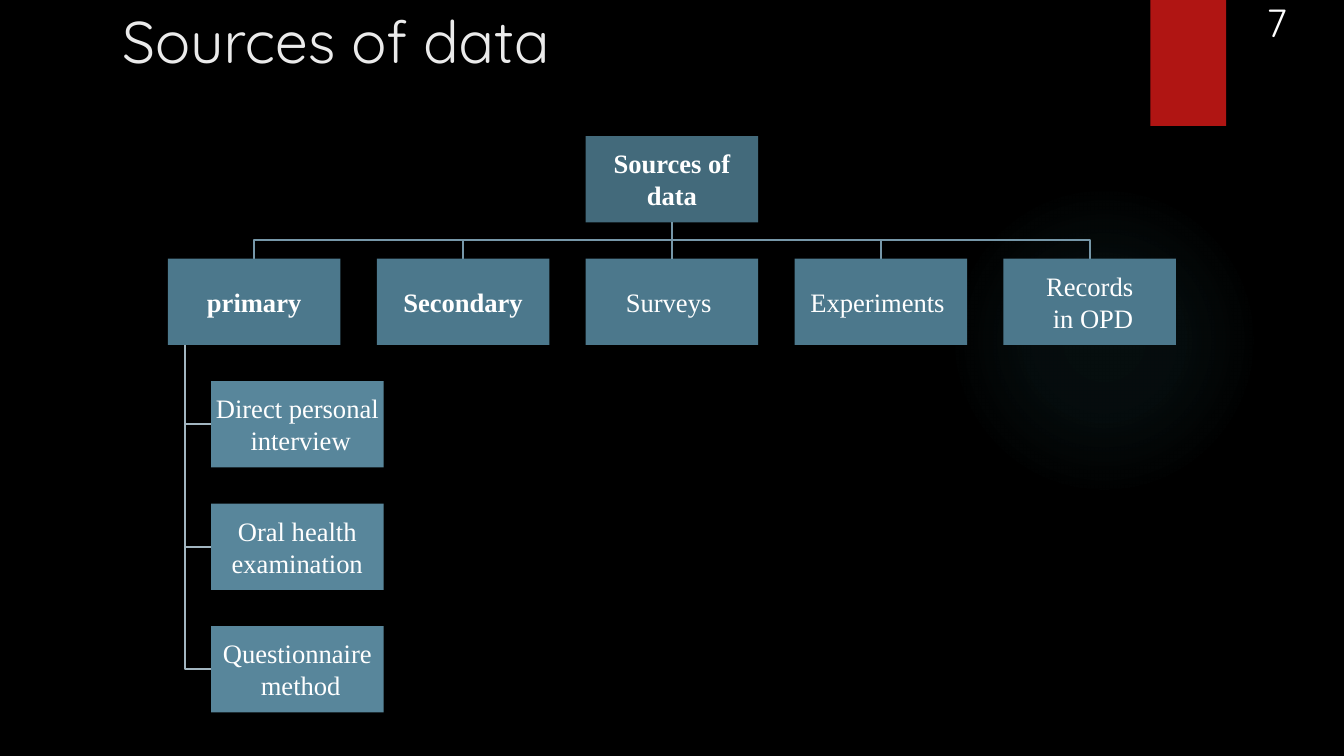
from lxml import etree
from pptx import Presentation
from pptx.dml.color import RGBColor
from pptx.enum.shapes import MSO_CONNECTOR, MSO_SHAPE
from pptx.enum.text import MSO_ANCHOR, PP_ALIGN
from pptx.oxml import parse_xml
from pptx.oxml.ns import qn
from pptx.util import Pt

RECTANGLE = MSO_SHAPE.RECTANGLE
OVAL = MSO_SHAPE.OVAL
STRAIGHT = MSO_CONNECTOR.STRAIGHT
CENTER = PP_ALIGN.CENTER
LEFT = PP_ALIGN.LEFT
TOP = MSO_ANCHOR.TOP
MIDDLE = MSO_ANCHOR.MIDDLE
BOTTOM = MSO_ANCHOR.BOTTOM
DRAWING = "http://schemas.openxmlformats.org/drawingml/2006/main"

COLORS = {
    "background": "000000", "glow": "50B9C1", "ribbon": "B01513",
    "title": "EBEBEB", "text": "FFFFFF",
    "root": "436A7B", "source": "4C788C", "method": "58869B",
    "source line": "7697A8", "method line": "A2B5C0",
}
BOX_WIDTH, BOX_HEIGHT = 123.2, 61.6
CHART_LEFT, CHART_TOP = 120, 97.2
COLUMN_STEP, ROW_STEP = 149.2, 87.5
METHOD_LEFT, TRUNK_X = 150.8, 132.4


def write_lines(frame, lines, font_name, size, color, align, bold=False):
    frame.word_wrap = True
    for index, line in enumerate(lines):
        para = frame.paragraphs[0] if index == 0 else frame.add_paragraph()
        para.alignment = align
        span = para.add_run()
        span.text = line
        span.font.name = font_name
        span.font.size = Pt(size)
        span.font.bold = bold
        span.font.color.rgb = RGBColor.from_string(COLORS[color])


def add_block(page, shape_type, left, top, width, height, color):
    block = page.shapes.add_shape(shape_type, Pt(left), Pt(top), Pt(width), Pt(height))
    block.shadow.inherit = False
    block.fill.solid()
    block.fill.fore_color.rgb = RGBColor.from_string(COLORS[color])
    block.line.fill.background()
    return block


deck = Presentation()
deck.slide_width, deck.slide_height = Pt(960), Pt(540)
page = deck.slides.add_slide(deck.slide_layouts[5])
page.background.fill.solid()
page.background.fill.fore_color.rgb = RGBColor.from_string(COLORS["background"])

glow = add_block(page, OVAL, 677.5, 131.8, 221.8, 221.8, "glow")
stops = "".join(
    f'<a:gs pos="{place}000"><a:srgbClr val="{COLORS["glow"]}"><a:alpha val="{alpha}000"/></a:srgbClr></a:gs>'
    for place, alpha in [(0, 7), (36, 6), (69, 0)]
)
gradient = parse_xml(
    f'<a:gradFill xmlns:a="{DRAWING}"><a:gsLst>{stops}</a:gsLst><a:path path="circle">'
    '<a:fillToRect l="50000" t="50000" r="50000" b="50000"/></a:path></a:gradFill>'
)
glow_properties = glow.element.spPr
glow_properties.replace(glow_properties.find(qn("a:solidFill")), gradient)

ribbon = add_block(page, RECTANGLE, 821.8, 0, 54, 90, "ribbon")
ribbon_effects = ribbon.element.spPr.find(qn("a:effectLst"))
ribbon_effects.append(parse_xml(
    f'<a:outerShdw xmlns:a="{DRAWING}" blurRad="{Pt(3)}" dist="{Pt(2)}" dir="5400000" rotWithShape="0">'
    '<a:srgbClr val="000000"><a:alpha val="45000"/></a:srgbClr></a:outerShdw>'
))

title = page.shapes.title
title.left, title.top, title.width, title.height = Pt(80), Pt(0), Pt(880), Pt(66)
title.text_frame.vertical_anchor = TOP
write_lines(title.text_frame, ["Sources of data"], "Quicksand", 42, "title", LEFT)

boxes = [(CHART_LEFT + 2 * COLUMN_STEP, 0, ["Sources of data"], "root", True)]
sources = [
    (["primary"], True), (["Secondary"], True), (["Surveys "], False),
    (["Experiments "], False), (["Records", " in OPD"], False),
]
for column, (lines, bold) in enumerate(sources):
    boxes.append((CHART_LEFT + column * COLUMN_STEP, 1, lines, "source", bold))
methods = [
    ["Direct personal", " interview"],
    ["Oral health", " examination "],
    ["Questionnaire", " method"],
]
for row, lines in enumerate(methods, start=2):
    boxes.append((METHOD_LEFT, row, lines, "method", False))

root_x = CHART_LEFT + 2 * COLUMN_STEP + BOX_WIDTH / 2
root_bottom = CHART_TOP + BOX_HEIGHT
source_top = CHART_TOP + ROW_STEP
bus_y = (root_bottom + source_top) / 2
elbows = []
for column in (0, 1, 3, 4):
    source_x = CHART_LEFT + column * COLUMN_STEP + BOX_WIDTH / 2
    elbows.append(([(root_x, root_bottom), (root_x, bus_y), (source_x, bus_y),
                    (source_x, source_top)], "source line"))
for row in (2, 3, 4):
    method_y = CHART_TOP + row * ROW_STEP + BOX_HEIGHT / 2
    elbows.append(([(TRUNK_X, source_top + BOX_HEIGHT), (TRUNK_X, method_y),
                    (METHOD_LEFT, method_y)], "method line"))
for points, color in elbows:
    corners = [(Pt(x), Pt(y)) for x, y in points]
    builder = page.shapes.build_freeform(*corners[0])
    builder.add_line_segments(corners[1:], close=False)
    elbow = builder.convert_to_shape()
    elbow.shadow.inherit = False
    elbow.fill.background()
    elbow.line.color.rgb = RGBColor.from_string(COLORS[color])
    elbow.line.width = Pt(1.5)

drawn = []
for left, row, lines, color, bold in boxes:
    box = add_block(page, RECTANGLE, left, CHART_TOP + row * ROW_STEP, BOX_WIDTH, BOX_HEIGHT, color)
    frame = box.text_frame
    frame.margin_left = frame.margin_right = frame.margin_top = frame.margin_bottom = Pt(0.7)
    frame.vertical_anchor = MIDDLE
    write_lines(frame, lines, "Times New Roman", 19, "text", CENTER, bold)
    drawn.append(box)

stem = page.shapes.add_connector(STRAIGHT, Pt(root_x), Pt(root_bottom), Pt(root_x), Pt(source_top))
stem.begin_connect(drawn[0], 2)
stem.end_connect(drawn[3], 0)
stem.line.color.rgb = RGBColor.from_string(COLORS["source line"])
stem.line.width = Pt(1.5)
etree.SubElement(stem.element.spPr, qn("a:effectLst"))

number = page.shapes.add_textbox(Pt(864), Pt(0), Pt(96), Pt(36))
number.text_frame.vertical_anchor = BOTTOM
write_lines(number.text_frame, ["7"], "Quicksand", 28, "text", CENTER)

deck.save("out.pptx")
